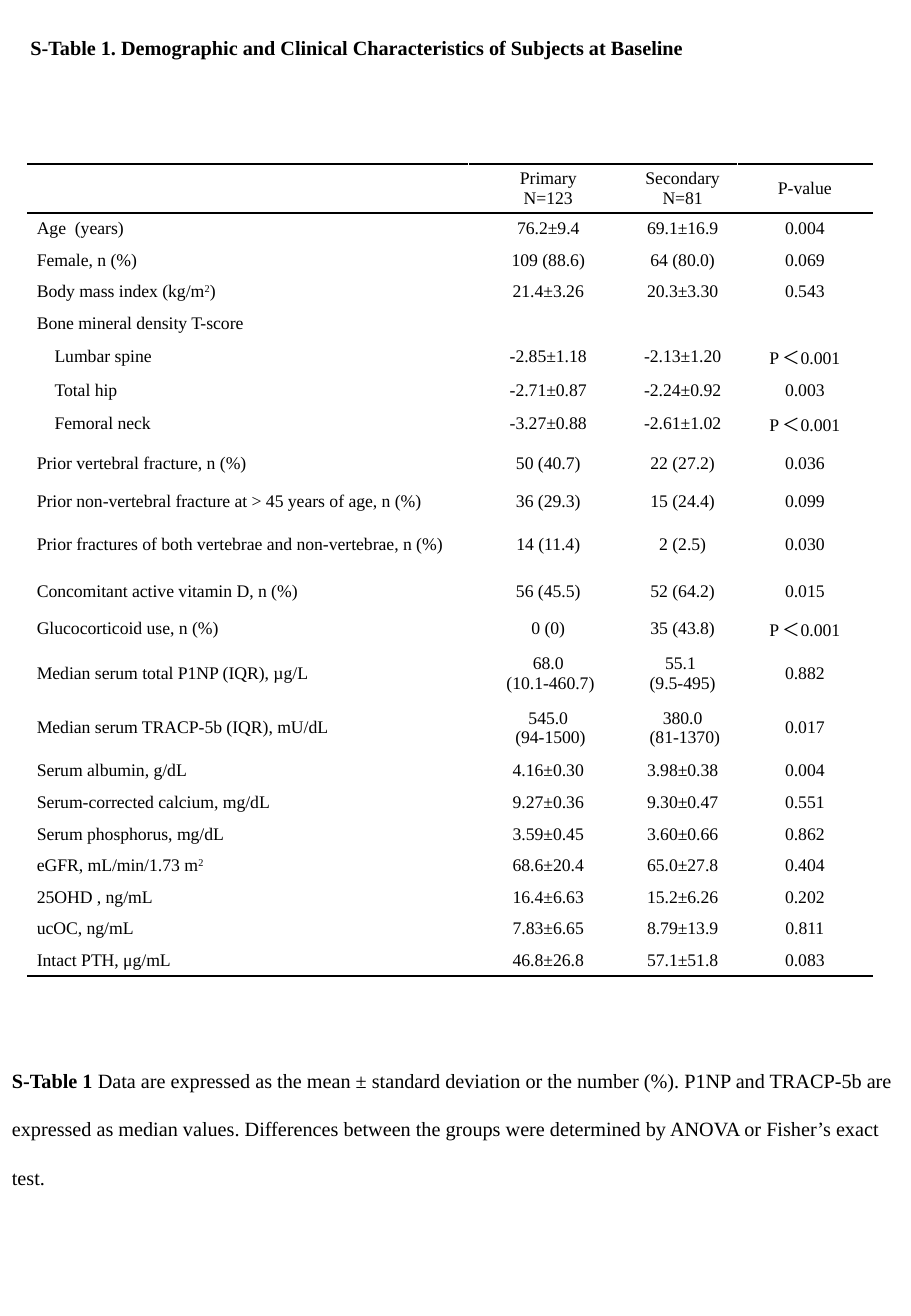
"""Build the slide with the baseline characteristics table."""
from dataclasses import dataclass

from lxml import etree
from pptx import Presentation
from pptx.dml.color import RGBColor
from pptx.enum.text import MSO_ANCHOR, MSO_AUTO_SIZE, PP_ALIGN
from pptx.oxml.ns import qn
from pptx.util import Cm, Pt

LEFT, CENTER = PP_ALIGN.LEFT, PP_ALIGN.CENTER
TOP, MIDDLE = MSO_ANCHOR.TOP, MSO_ANCHOR.MIDDLE
NO_AUTOFIT = MSO_AUTO_SIZE.NONE
FONT = "Times New Roman"
BLACK, WHITE = "000000", "FFFFFF"
CELL_SIZE, TEXT_SIZE = 10.5, 12
SINGLE, DOUBLE = 0.66, 1.14
COLUMN_WIDTHS = (9.22, 3.33, 2.29, 2.82)
BLANK_ROW = 1.27


@dataclass(frozen=True)
class Measure:
    """One table row; ^ encloses superscript and a newline starts a paragraph."""
    label: str
    primary: str = ""
    secondary: str = ""
    p_value: str = ""
    height: float = SINGLE
    indent: float = 0


SUB_INDENT = 0.37
MEASURES = (
    Measure("", "Primary\nN=123", "Secondary\nN=81", "P-value"),
    Measure("Age  (years)", "76.2±9.4", "69.1±16.9", "0.004"),
    Measure("Female, n (%)", "109 (88.6)", "64 (80.0)", "0.069"),
    Measure("Body mass index (kg/m^2^)", "21.4±3.26", "20.3±3.30", "0.543"),
    Measure("Bone mineral density T-score"),
    Measure("Lumbar spine", "-2.85±1.18", "-2.13±1.20", "P ＜0.001", indent=SUB_INDENT),
    Measure("Total hip", "-2.71±0.87", "-2.24±0.92", "0.003", indent=SUB_INDENT),
    Measure("Femoral neck", "-3.27±0.88", "-2.61±1.02", "P ＜0.001", indent=SUB_INDENT),
    Measure("Prior vertebral fracture, n (%)", "50 (40.7)", "22 (27.2)", "0.036", 0.94),
    Measure("Prior non-vertebral fracture at > 45 years of age, n (%)",
            "36 (29.3)", "15 (24.4)", "0.099"),
    Measure("Prior fractures of both vertebrae and non-vertebrae, n (%)",
            "14 (11.4)", "2 (2.5)", "0.030", DOUBLE),
    Measure("Concomitant active vitamin D, n (%)", "56 (45.5)", "52 (64.2)", "0.015", 0.81),
    Measure("Glucocorticoid use, n (%)", "0 (0)", "35 (43.8)", "P ＜0.001"),
    Measure("Median serum total P1NP (IQR), µg/L",
            "68.0\n (10.1-460.7)", "55.1 \n(9.5-495)", "0.882", DOUBLE),
    Measure("Median serum TRACP-5b (IQR), mU/dL",
            "545.0\n (94-1500)", "380.0\n (81-1370)", "0.017", DOUBLE),
    Measure("Serum albumin, g/dL", "4.16±0.30", "3.98±0.38", "0.004"),
    Measure("Serum-corrected calcium, mg/dL", "9.27±0.36", "9.30±0.47", "0.551"),
    Measure("Serum phosphorus, mg/dL", "3.59±0.45", "3.60±0.66", "0.862"),
    Measure("eGFR, mL/min/1.73 m^2^", "68.6±20.4", "65.0±27.8", "0.404"),
    Measure("25OHD , ng/mL", "16.4±6.63", "15.2±6.26", "0.202"),
    Measure("ucOC, ng/mL", "7.83±6.65", "8.79±13.9", "0.811"),
    Measure("Intact PTH, μg/mL", "46.8±26.8", "57.1±51.8", "0.083"),
)
TITLE = "S-Table 1. Demographic and Clinical Characteristics of Subjects at Baseline"
NOTE_LEAD = "S-Table 1 "
NOTE = ("Data are expressed as the mean ± standard deviation or the number (%). "
        "P1NP and TRACP-5b are expressed as median values. Differences between the "
        "groups were determined by ANOVA or Fisher’s exact test.")


def color(hex_value: str) -> RGBColor:
    """Turn a hex string into a colour."""
    return RGBColor.from_string(hex_value)


def add_run(paragraph, text: str, size: float, bold: bool = False,
            superscript: bool = False) -> None:
    """Append one formatted run."""
    run = paragraph.add_run()
    run.text = text
    run.font.name = FONT
    run.font.size = Pt(size)
    run.font.bold = bold
    run.font.color.rgb = color(BLACK)
    if superscript:
        run.font._element.set("baseline", "30000")


def place(shape, left: float, top: float, width: float, height: float) -> None:
    """Move and size a text shape and set its frame."""
    shape.left, shape.top = Cm(left), Cm(top)
    shape.width, shape.height = Cm(width), Cm(height)
    frame = shape.text_frame
    frame.word_wrap = True
    frame.auto_size = NO_AUTOFIT
    frame.vertical_anchor = TOP


def set_borders(cell, top: str, bottom: str) -> None:
    """Draw the four cell borders, with white sides."""
    properties = cell._tc.get_or_add_tcPr()
    for side, hex_value in (("L", WHITE), ("R", WHITE), ("T", top), ("B", bottom)):
        line = etree.SubElement(properties, qn(f"a:ln{side}"), w=str(Pt(1)))
        fill = etree.SubElement(line, qn("a:solidFill"))
        etree.SubElement(fill, qn("a:srgbClr"), val=hex_value)
    cell.fill.background()


def fill_cell(cell, text: str, align: PP_ALIGN, indent: float) -> None:
    """Write the paragraphs of one cell."""
    cell.vertical_anchor = MIDDLE
    cell.margin_left = cell.margin_right = Cm(0.19)
    cell.margin_top = cell.margin_bottom = Cm(0.1)
    for index, line in enumerate(text.split("\n")):
        frame = cell.text_frame
        paragraph = frame.add_paragraph() if index else frame.paragraphs[0]
        paragraph.alignment = align
        if indent:
            paragraph._p.get_or_add_pPr().set("marL", str(Cm(indent)))
        if not line:
            etree.SubElement(paragraph._p, qn("a:endParaRPr"), sz=str(int(CELL_SIZE * 100)))
            continue
        for part_index, part in enumerate(line.split("^")):
            if part:
                add_run(paragraph, part, CELL_SIZE, superscript=part_index % 2 == 1)


def add_characteristics(slide) -> None:
    """Add the table, with an empty merged row above its header."""
    heights = [BLANK_ROW] + [measure.height for measure in MEASURES]
    table = slide.shapes.add_table(
        len(heights), len(COLUMN_WIDTHS), Cm(0.58), Cm(2.16),
        Cm(sum(COLUMN_WIDTHS)), Cm(sum(heights))).table
    table.first_row = table.horz_banding = False
    for column, width in zip(table.columns, COLUMN_WIDTHS):
        column.width = Cm(width)
    ruled_rows = (0, 1, len(MEASURES))
    for row_index, height in enumerate(heights):
        table.rows[row_index].height = Cm(height)
        top = BLACK if row_index - 1 in ruled_rows else WHITE
        bottom = BLACK if row_index in ruled_rows else WHITE
        for cell in table.rows[row_index].cells:
            set_borders(cell, top, bottom)
    for first in (0, 2):
        table.cell(0, first).merge(table.cell(0, first + 1))
    for row_index, measure in enumerate(MEASURES, 1):
        fill_cell(table.cell(row_index, 0), measure.label, LEFT, measure.indent)
        values = (measure.primary, measure.secondary, measure.p_value)
        for column_index, value in enumerate(values, 1):
            fill_cell(table.cell(row_index, column_index), value, CENTER, 0)


def main() -> None:
    """Build and save the slide."""
    deck = Presentation()
    deck.slide_width, deck.slide_height = Cm(19.05), Cm(27.51)
    slide = deck.slides.add_slide(deck.slide_layouts[5])

    title = slide.shapes.title
    place(title, 0.38, 0.61, 14.96, 0.76)
    heading = title.text_frame.paragraphs[0]
    heading.alignment = LEFT
    add_run(heading, TITLE, TEXT_SIZE, bold=True)

    add_characteristics(slide)

    note = slide.shapes.add_textbox(0, 0, 0, 0)
    place(note, 0, 21.69, 19.05, 3.18)
    legend = note.text_frame.paragraphs[0]
    legend.line_spacing = 2.0
    add_run(legend, NOTE_LEAD, TEXT_SIZE, bold=True)
    add_run(legend, NOTE, TEXT_SIZE)

    deck.save("out.pptx")


if __name__ == "__main__":
    main()
